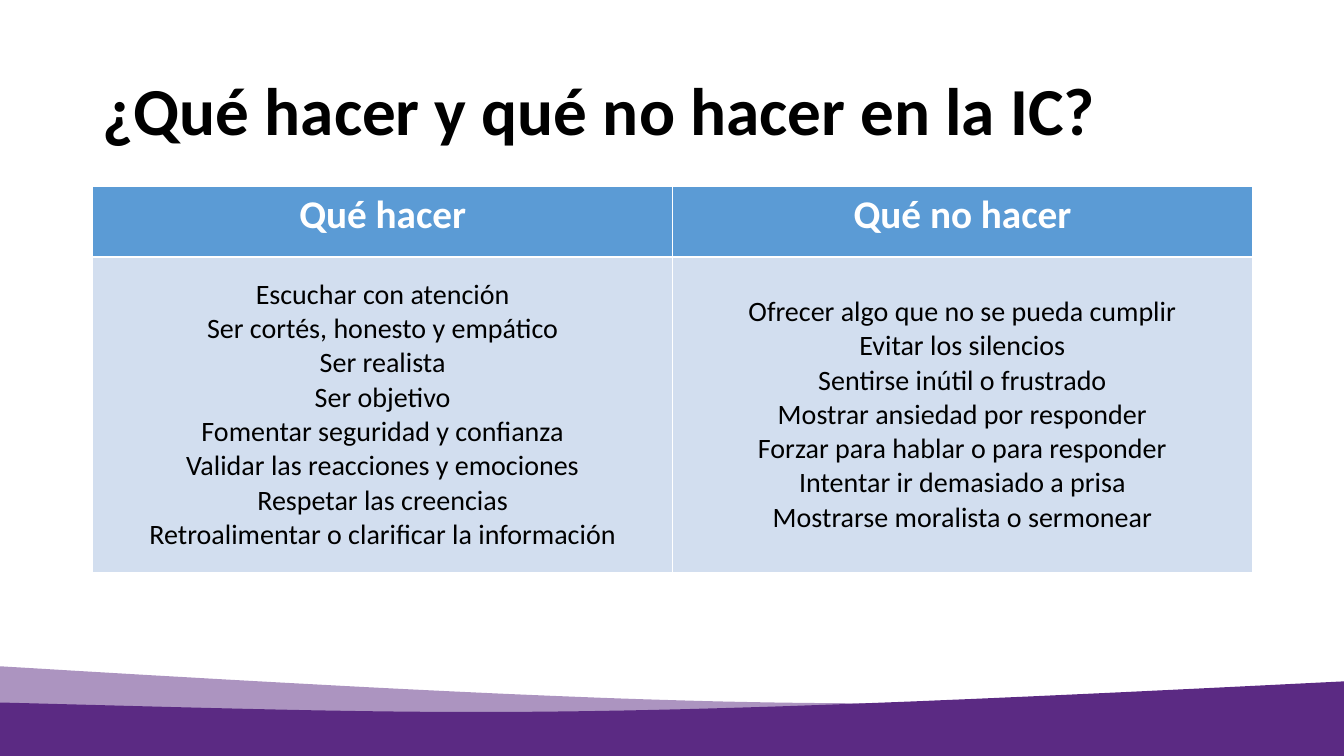
from dataclasses import dataclass

from lxml import etree
from pptx import Presentation
from pptx import util as u
from pptx.dml.color import RGBColor
from pptx.enum import text
from pptx.oxml import ns


@dataclass(frozen=True)
class Theme:
    """Colours, font and type sizes of the slide."""

    font: str = "Calibri"
    purple: str = "5B2A83"
    header: str = "5B9BD5"
    body: str = "D2DEEF"
    white: str = "FFFFFF"
    black: str = "000000"
    title_size: int = 48
    header_size: int = 28
    body_size: int = 20
    border: int = 1


class Deck:
    """Draws styled elements on the current slide."""

    def __init__(self, theme):
        self.theme = theme
        self.prs = Presentation()
        self.prs.slide_width = u.Inches(13.33)
        self.prs.slide_height = u.Inches(7.5)
        self.slide = self.prs.slides.add_slide(self.prs.slide_layouts[6])

    def set_lines(self, frame, lines, size, color, bold=False, align=text.PP_ALIGN.CENTER):
        """Fill a text frame with one paragraph per line."""
        for i, line in enumerate(lines):
            paragraph = frame.paragraphs[0] if i == 0 else frame.add_paragraph()
            paragraph.text = line
            paragraph.alignment = align
            font = paragraph.font
            font.name, font.size, font.bold = self.theme.font, u.Pt(size), bold
            font.color.rgb = RGBColor.from_string(color)

    def title(self, words, left, top, width, height):
        """Add the slide heading."""
        frame = self.slide.shapes.add_textbox(
            *map(u.Inches, (left, top, width, height))).text_frame
        frame.word_wrap = True
        frame.vertical_anchor = text.MSO_ANCHOR.MIDDLE
        self.set_lines(frame, [words], self.theme.title_size, self.theme.black,
                       True, text.PP_ALIGN.LEFT)
        frame.paragraphs[0].line_spacing = 0.9

    def wave(self, curve, alpha=100, steps=60):
        """Add a band between a cubic Bezier curve and the slide bottom."""
        points = []
        for i in range(steps + 1):
            t = i / steps
            weights = ((1 - t) ** 3, 3 * t * (1 - t) ** 2, 3 * t * t * (1 - t), t ** 3)
            points.append(tuple(sum(w * p[axis] for w, p in zip(weights, curve))
                                for axis in (0, 1)))
        points += [(curve[-1][0], 7.5), (curve[0][0], 7.5)]
        start, *rest = [(u.Inches(x), u.Inches(y)) for x, y in points]
        builder = self.slide.shapes.build_freeform(*start)
        builder.add_line_segments(rest, close=True)
        band = builder.convert_to_shape()
        band.shadow.inherit = False
        band.line.fill.background()
        band.fill.solid()
        band.fill.fore_color.rgb = RGBColor.from_string(self.theme.purple)
        if alpha < 100:
            color = band.element.spPr.find(".//" + ns.qn("a:srgbClr"))
            etree.SubElement(color, ns.qn("a:alpha"), val=str(alpha * 1000))

    def cell(self, cell, lines, fill, anchor, **style):
        """Style one table cell with its text, fill and borders."""
        cell.vertical_anchor = anchor
        cell.fill.solid()
        cell.fill.fore_color.rgb = RGBColor.from_string(fill)
        self.set_lines(cell.text_frame, lines, **style)
        props = cell._tc.get_or_add_tcPr()
        for i, side in enumerate("LRTB"):
            edge = etree.Element(ns.qn("a:ln" + side), w=str(u.Pt(self.theme.border)))
            solid = etree.SubElement(edge, ns.qn("a:solidFill"))
            etree.SubElement(solid, ns.qn("a:srgbClr"), val=self.theme.white)
            props.insert(i, edge)

    def table(self, columns, left, top, width, heights):
        """Add a two-row table from a mapping of headings to advice."""
        theme = self.theme
        grid = self.slide.shapes.add_table(
            2, len(columns),
            *map(u.Inches, (left, top, width, sum(heights)))).table
        for row, height in zip(grid.rows, heights):
            row.height = u.Inches(height)
        for i, (heading, advice) in enumerate(columns.items()):
            grid.columns[i].width = u.Inches(width / len(columns))
            self.cell(grid.cell(0, i), [heading], theme.header, text.MSO_ANCHOR.TOP,
                      size=theme.header_size, color=theme.white, bold=True)
            self.cell(grid.cell(1, i), advice, theme.body, text.MSO_ANCHOR.MIDDLE,
                      size=theme.body_size, color=theme.black)


ADVICE = {
    "Qué hacer": [
        "Escuchar con atención",
        "Ser cortés, honesto y empático",
        "Ser realista",
        "Ser objetivo",
        "Fomentar seguridad y confianza",
        "Validar las reacciones y emociones",
        "Respetar las creencias",
        "Retroalimentar o clarificar la información",
    ],
    "Qué no hacer": [
        "Ofrecer algo que no se pueda cumplir",
        "Evitar los silencios",
        "Sentirse inútil o frustrado",
        "Mostrar ansiedad por responder",
        "Forzar para hablar o para responder",
        "Intentar ir demasiado a prisa",
        "Mostrarse moralista o sermonear",
    ],
}


def main():
    """Build and save the slide."""
    deck = Deck(Theme())
    deck.wave([(13.33, 6.87), (8.64, 7.01), (7.94, 7.09), (0, 6.61)], alpha=50)
    deck.wave([(0, 6.97), (4.7, 7.09), (5.4, 7.16), (13.33, 6.76)])
    deck.title("¿Qué hacer y qué no hacer en la IC?", 0.92, 0.4, 11.5, 1.45)
    deck.table(ADVICE, 0.92, 1.85, 11.5, (0.7, 3.13))
    deck.prs.save("out.pptx")


if __name__ == "__main__":
    main()
